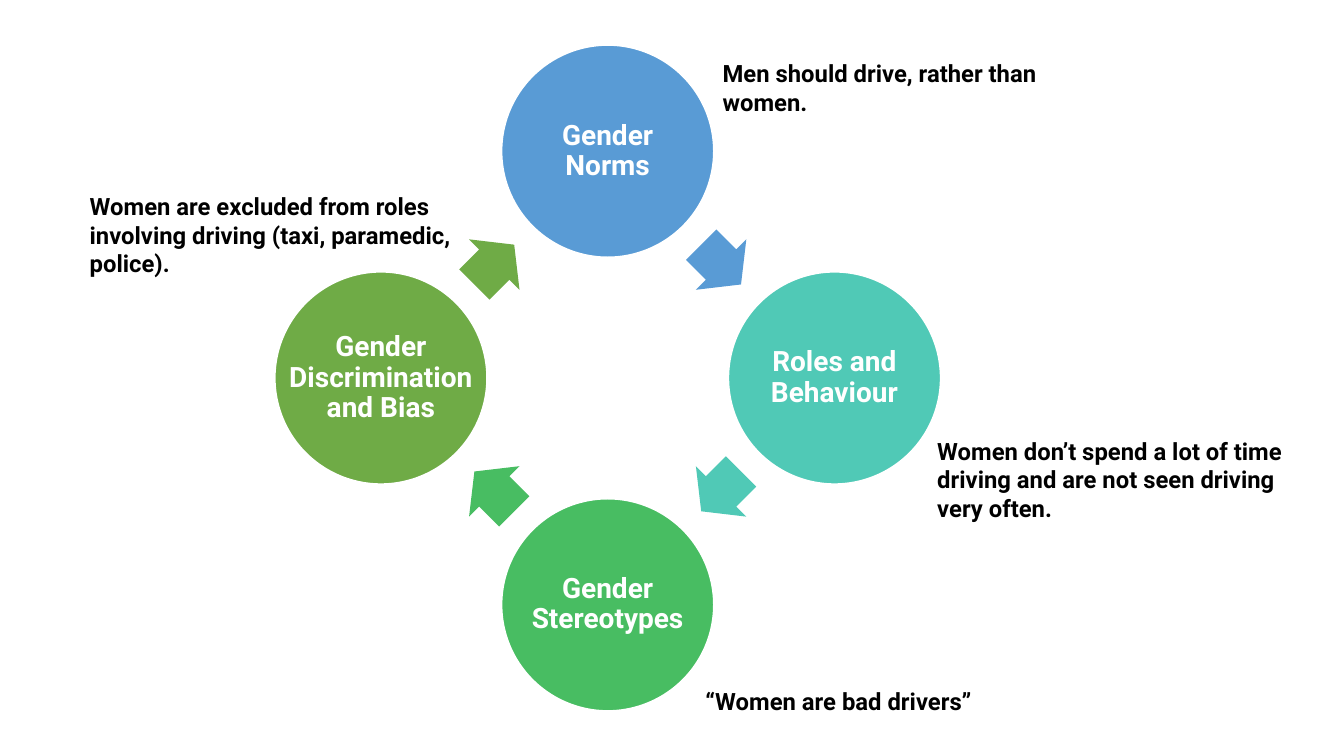
import math

import pptx
import pptx.dml.color
import pptx.enum.shapes
import pptx.enum.text
import pptx.util

Cm = pptx.util.Cm
Pt = pptx.util.Pt
SHAPE = pptx.enum.shapes.MSO_SHAPE
ALIGN = pptx.enum.text.PP_ALIGN
ANCHOR = pptx.enum.text.MSO_ANCHOR
AUTOFIT = pptx.enum.text.MSO_AUTO_SIZE

COLORS = {
    "norms": "599BD5",
    "roles": "50C9B6",
    "stereotypes": "48BD62",
    "bias": "6FAB46",
    "white": "FFFFFF",
    "black": "000000",
}

STAGES = [
    ("norms", "Gender Norms", 3.81),
    ("roles", "Roles and Behaviour", 3.81),
    ("stereotypes", "Gender Stereotypes", 4.6),
    ("bias", "Gender Discrimination\nand Bias", 5.4),
]

CAPTIONS = [
    ("Men should drive, rather than women.", 17.96, 1.35, 1.7),
    ("Women don’t spend a lot of time driving and are not seen driving very often.",
     23.37, 10.87, 2.44),
    ("“Women are bad drivers”", 17.53, 17.17, 0.99),
    ("Women are excluded from roles involving driving (taxi, paramedic, police).",
     2.01, 4.7, 2.44),
]


def rgb(name):
    return pptx.dml.color.RGBColor.from_string(COLORS[name])


def add_text(slide, text, left, top, width, height, *, size, color,
             align=ALIGN.LEFT, anchor=ANCHOR.TOP, inset=(0.25, 0.13),
             spacing=1.0, autofit=AUTOFIT.NONE):
    tf = slide.shapes.add_textbox(Cm(left), Cm(top), Cm(width), Cm(height)).text_frame
    tf.word_wrap = True
    tf.auto_size = autofit
    tf.vertical_anchor = anchor
    tf.margin_left = tf.margin_right = Cm(inset[0])
    tf.margin_top = tf.margin_bottom = Cm(inset[1])
    tf.text = text
    for p in tf.paragraphs:
        p.alignment = align
        p.line_spacing = spacing
        for r in p.runs:
            r.font.name = "Roboto"
            r.font.size = Pt(size)
            r.font.bold = True
            r.font.color.rgb = rgb(color)


def add_centred_shape(slide, kind, cx, cy, width, height, color):
    sp = slide.shapes.add_shape(
        kind, Cm(cx - width / 2), Cm(cy - height / 2), Cm(width), Cm(height))
    sp.shadow.inherit = False
    sp.fill.solid()
    sp.fill.fore_color.rgb = rgb(color)
    sp.line.fill.background()
    return sp


def add_cycle(slide, left, top, size):
    diameter = 0.32 * size
    orbit = (size - diameter) / 2
    cx, cy = left + size / 2, top + size / 2
    label_height = 3.81
    for i, (color, label, label_width) in enumerate(STAGES):
        angle = math.radians(90 * i - 90)
        x = cx + orbit * math.cos(angle)
        y = cy + orbit * math.sin(angle)
        sp = add_centred_shape(slide, SHAPE.OVAL, x, y, diameter, diameter, color)
        sp.line.color.rgb = rgb("white")
        sp.line.width = Pt(2)
        add_text(slide, label, x - label_width / 2, y - label_height / 2,
                 label_width, label_height, size=20, color="white",
                 align=ALIGN.CENTER, anchor=ANCHOR.MIDDLE,
                 inset=(0.05, 0.05), spacing=0.9)

        midway = angle + math.pi / 4
        reach = orbit * math.cos(math.pi / 4)
        sp = add_centred_shape(
            slide, SHAPE.RIGHT_ARROW, cx + reach * math.cos(midway),
            cy + reach * math.sin(midway), 1.42, 1.8, color)
        sp.adjustments[0] = 0.6
        sp.adjustments[1] = 0.5
        sp.rotation = 45 + 90 * i


def add_captions(slide, width):
    for text, left, top, height in CAPTIONS:
        add_text(slide, text, left, top, width, height, size=17, color="black",
                 autofit=AUTOFIT.SHAPE_TO_FIT_TEXT)


def main():
    prs = pptx.Presentation()
    prs.slide_width = Cm(33.87)
    prs.slide_height = Cm(19.05)
    slide = prs.slides.add_slide(prs.slide_layouts[6])
    add_cycle(slide, 6.91, 1.12, 16.81)
    add_captions(slide, 9.75)
    prs.save("out.pptx")


if __name__ == "__main__":
    main()
